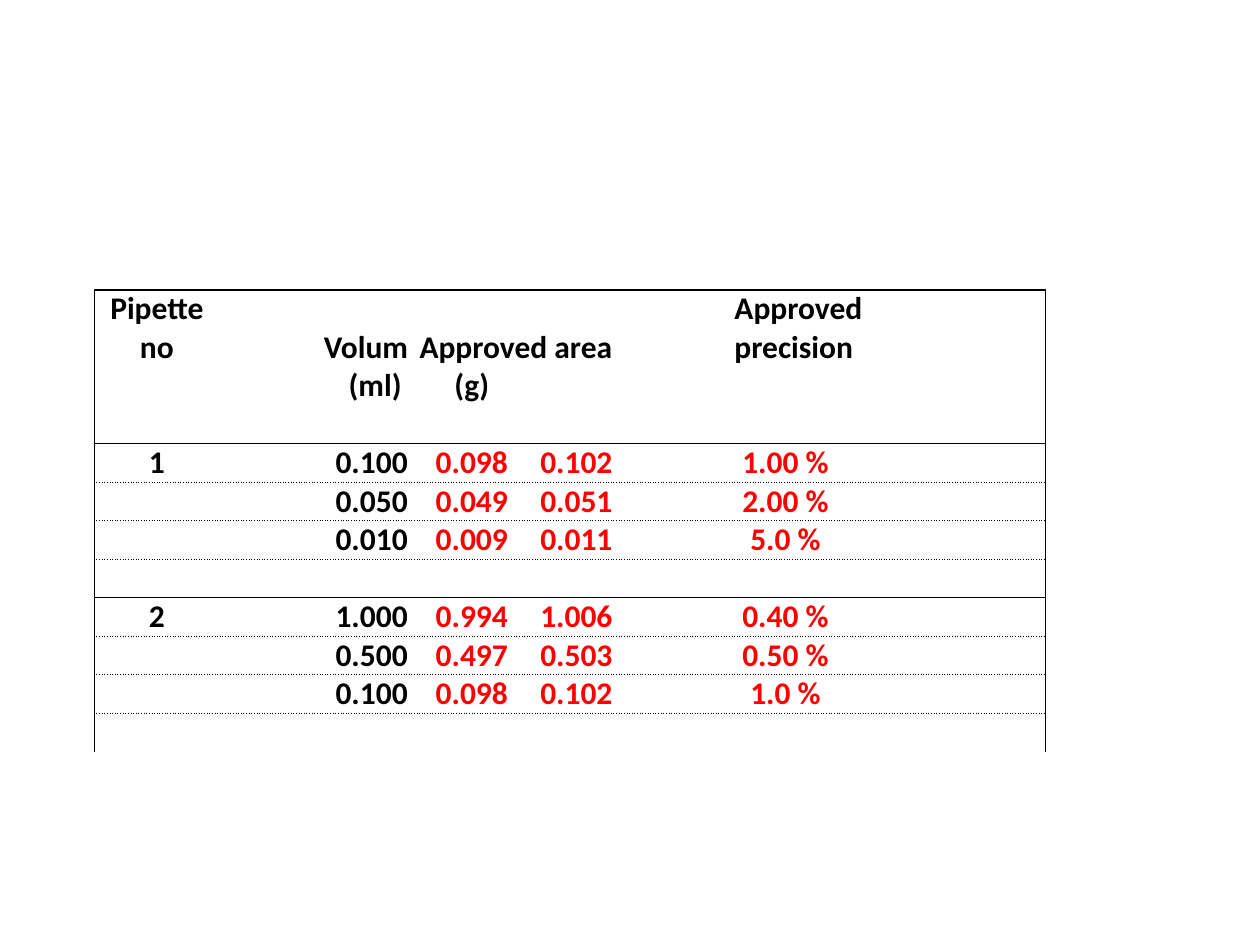
from lxml import etree
from pptx import Presentation
from pptx import util as u
from pptx.dml.color import RGBColor
from pptx.enum import text
from pptx.oxml.ns import qn

BLACK = RGBColor(0, 0, 0)
RED = RGBColor(0xFF, 0, 0)
LEFT, MID = text.PP_ALIGN.LEFT, text.PP_ALIGN.CENTER

WIDTHS = [0.99, 0.83, 0.76, 0.83, 0.83, 0.84, 0.81, 0.83, 0.83]
ROW = 0.26
ROWS = 11
NO, VOL, LOW, HIGH, PREC = 0, 2, 3, 4, 6  # columns that hold text
RULES = {0, 3, 7}  # rows that start with a solid line

# First row of each pipette, with volume, approved area and precision
TESTS = {
    3: ("1", [("0.100", "0.098", "0.102", "1.00 %"),
              ("0.050", "0.049", "0.051", "2.00 %"),
              ("0.010", "0.009", "0.011", "5.0 %")]),
    7: ("2", [("1.000", "0.994", "1.006", "0.40 %"),
              ("0.500", "0.497", "0.503", "0.50 %"),
              ("0.100", "0.098", "0.102", "1.0 %")]),
}


def write(cell, lines, align=MID, color=BLACK):
    frame = cell.text_frame
    for i, line in enumerate(lines):
        para = frame.add_paragraph() if i else frame.paragraphs[0]
        para.alignment = align
        run = para.add_run()
        run.text = line
        font = run.font
        font.name, font.size, font.bold = "Calibri", u.Pt(18), True
        font.color.rgb = color


def edge(props, side, style):
    """Add one cell border; style is (points, dash) or None."""
    line = etree.SubElement(props, qn(f"a:ln{side}"))
    if style is None:
        etree.SubElement(line, qn("a:noFill"))
        return
    width, dash = style
    line.set("w", str(u.Pt(width)))
    fill = etree.SubElement(line, qn("a:solidFill"))
    etree.SubElement(fill, qn("a:srgbClr"), val=str(BLACK))
    etree.SubElement(line, qn("a:prstDash"), val=dash)


def rule(row):
    """Style of the line above a row."""
    if row in RULES:
        return 1, "solid"
    if 3 < row < ROWS:
        return 0.5, "sysDot"
    return None


def dress(cell, row, col):
    cell.margin_left = cell.margin_right = 0
    cell.margin_top = cell.margin_bottom = 0
    cell.vertical_anchor = text.MSO_ANCHOR.BOTTOM
    props = cell._tc.get_or_add_tcPr()
    side = (1, "solid")
    edge(props, "L", side if col == 0 else None)
    edge(props, "R", side if col == len(WIDTHS) - 1 else None)
    edge(props, "T", rule(row))
    edge(props, "B", rule(row + 1))
    cell.fill.background()


def add_grid(slide):
    frame = slide.shapes.add_table(
        ROWS, len(WIDTHS), u.Inches(0.75), u.Inches(2.3),
        u.Inches(sum(WIDTHS)), u.Inches(ROW * ROWS))
    grid = frame.table
    grid.first_row = grid.horz_banding = False
    for col, width in zip(grid.columns, WIDTHS):
        col.width = u.Inches(width)
    for r, row in enumerate(grid.rows):
        row.height = u.Inches(ROW)
        for c, cell in enumerate(row.cells):
            dress(cell, r, c)
    return grid


def fill_head(grid):
    for col in (LOW, PREC):
        grid.cell(0, col).merge(grid.cell(0, col + 1))
    write(grid.cell(0, NO), ["Pipette no"])
    write(grid.cell(0, VOL), ["Volum"], LEFT)
    write(grid.cell(0, LOW), ["Approved area"], LEFT)
    write(grid.cell(0, PREC), ["Approved", "precision"], LEFT)
    write(grid.cell(1, VOL), [" (ml)"])
    write(grid.cell(1, LOW), ["(g)"])


def fill_tests(grid):
    for top, (name, tests) in TESTS.items():
        write(grid.cell(top, NO), [name])
        for r, values in enumerate(tests, top):
            for col, value in zip((VOL, LOW, HIGH, PREC), values):
                color = BLACK if col == VOL else RED
                write(grid.cell(r, col), [value], color=color)


def main():
    deck = Presentation()
    deck.slide_width, deck.slide_height = u.Inches(10), u.Inches(7.5)
    slide = deck.slides.add_slide(deck.slide_layouts[6])

    # Pipette control table
    grid = add_grid(slide)
    fill_head(grid)
    fill_tests(grid)
    deck.save("out.pptx")


if __name__ == "__main__":
    main()
